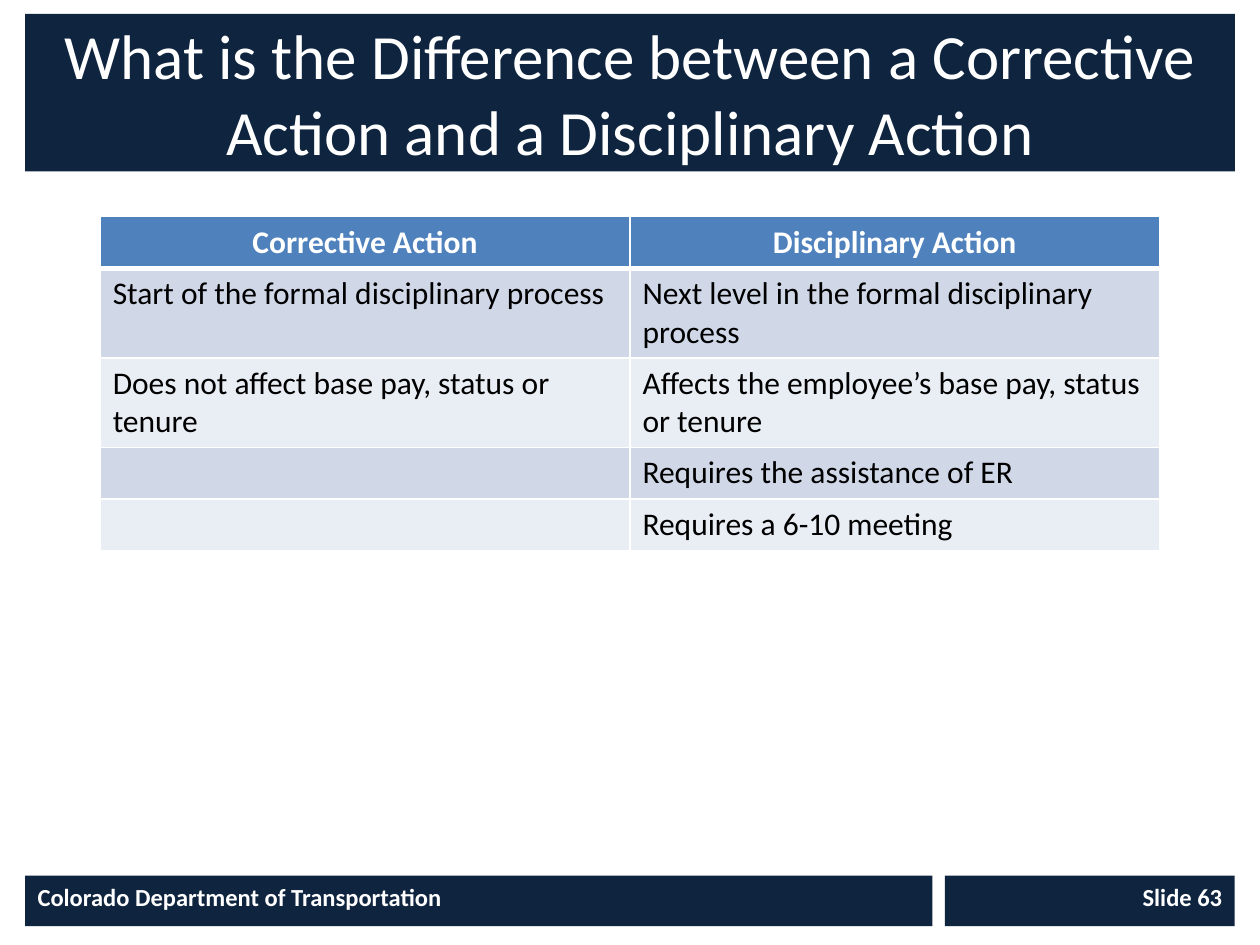
from lxml import etree
from pptx import Presentation
from pptx.dml.color import RGBColor
from pptx.enum.shapes import MSO_SHAPE
from pptx.enum.text import MSO_ANCHOR, MSO_AUTO_SIZE, PP_ALIGN
from pptx.oxml.ns import qn
from pptx.util import Inches, Pt

# Content
TITLE = "What is the Difference between a Corrective Action and a Disciplinary Action"
COMPARISON = [
    ("Corrective Action", "Disciplinary Action"),
    ("Start of the formal disciplinary process",
     "Next level in the formal disciplinary process"),
    ("Does not affect base pay, status or tenure",
     "Affects the employee’s base pay, status or tenure"),
    ("", "Requires the assistance of ER"),
    ("", "Requires a 6-10 meeting"),
]
# Text, width in inches, alignment
FOOTER = [
    ("Colorado Department of Transportation", 7.2, PP_ALIGN.LEFT),
    ("Slide 63", 2.3, PP_ALIGN.RIGHT),
]

NAVY = RGBColor(0x0F, 0x24, 0x3E)
HEADER_BLUE = RGBColor(0x4F, 0x81, 0xBD)
BANDS = (RGBColor(0xD0, 0xD8, 0xE8), RGBColor(0xE9, 0xED, 0xF4))
WHITE = RGBColor(0xFF, 0xFF, 0xFF)
BLACK = RGBColor(0, 0, 0)

# Layout in inches
SLIDE_W, SLIDE_H = 10, 7.5
MARGIN = 0.2
TITLE_TOP, TITLE_H = 0.11, 1.25
TABLE_TOP, TABLE_W, ROW_H = 1.72, 8.41, 0.41
FOOTER_TOP, FOOTER_H, FOOTER_GAP = 6.95, 0.4, 0.1


def write(frame, text, color, size, bold=False, align=PP_ALIGN.LEFT):
    paragraph = frame.paragraphs[0]
    paragraph.alignment = align
    if not text:
        return
    run = paragraph.add_run()
    run.text = text
    for name, value in {"name": "Calibri", "size": Pt(size), "bold": bold}.items():
        setattr(run.font, name, value)
    run.font.color.rgb = color


def place(shape, left, top, width, height):
    box = {"left": left, "top": top, "width": width, "height": height}
    for side, value in box.items():
        setattr(shape, side, Inches(value))


def paint(fillable, color):
    fillable.fill.solid()
    fillable.fill.fore_color.rgb = color


def add_borders(cell, bottom_width):
    properties = cell._tc.get_or_add_tcPr()
    widths = {"a:lnL": 1, "a:lnR": 1, "a:lnT": 1, "a:lnB": bottom_width}
    for position, (tag, width) in enumerate(widths.items()):
        line = etree.Element(qn(tag), w=str(Pt(width)))
        fill = etree.SubElement(line, qn("a:solidFill"))
        etree.SubElement(fill, qn("a:srgbClr"), val=str(WHITE))
        properties.insert(position, line)


def add_title(slide):
    title = slide.shapes.title
    place(title, MARGIN, TITLE_TOP, SLIDE_W - 2 * MARGIN, TITLE_H)
    paint(title, NAVY)
    frame = title.text_frame
    frame.auto_size = MSO_AUTO_SIZE.NONE
    frame.vertical_anchor = MSO_ANCHOR.MIDDLE
    write(frame, TITLE, WHITE, 36, align=PP_ALIGN.CENTER)


def add_comparison(slide):
    rows, columns = len(COMPARISON), len(COMPARISON[0])
    table = slide.shapes.add_table(
        rows, columns, Inches((SLIDE_W - TABLE_W) / 2), Inches(TABLE_TOP),
        Inches(TABLE_W), Inches(rows * ROW_H)).table
    for r, entries in enumerate(COMPARISON):
        header = r == 0
        for c, text in enumerate(entries):
            cell = table.cell(r, c)
            paint(cell, HEADER_BLUE if header else BANDS[(r - 1) % 2])
            add_borders(cell, 3 if header else 1)
            write(cell.text_frame, text, WHITE if header else BLACK, 18, header,
                  PP_ALIGN.CENTER if header else PP_ALIGN.LEFT)


def add_footer(slide):
    left = MARGIN
    for text, width, align in FOOTER:
        bar = slide.shapes.add_shape(
            MSO_SHAPE.RECTANGLE, Inches(left), Inches(FOOTER_TOP),
            Inches(width), Inches(FOOTER_H))
        bar.shadow.inherit = False
        paint(bar, NAVY)
        bar.line.fill.background()
        bar.text_frame.word_wrap = True
        bar.text_frame.vertical_anchor = MSO_ANCHOR.TOP
        write(bar.text_frame, text, WHITE, 14, True, align)
        left += width + FOOTER_GAP


def main():
    deck = Presentation()
    deck.slide_width, deck.slide_height = Inches(SLIDE_W), Inches(SLIDE_H)
    slide = deck.slides.add_slide(deck.slide_layouts[5])  # title only
    add_comparison(slide)
    add_footer(slide)
    add_title(slide)
    deck.save("out.pptx")


if __name__ == "__main__":
    main()
